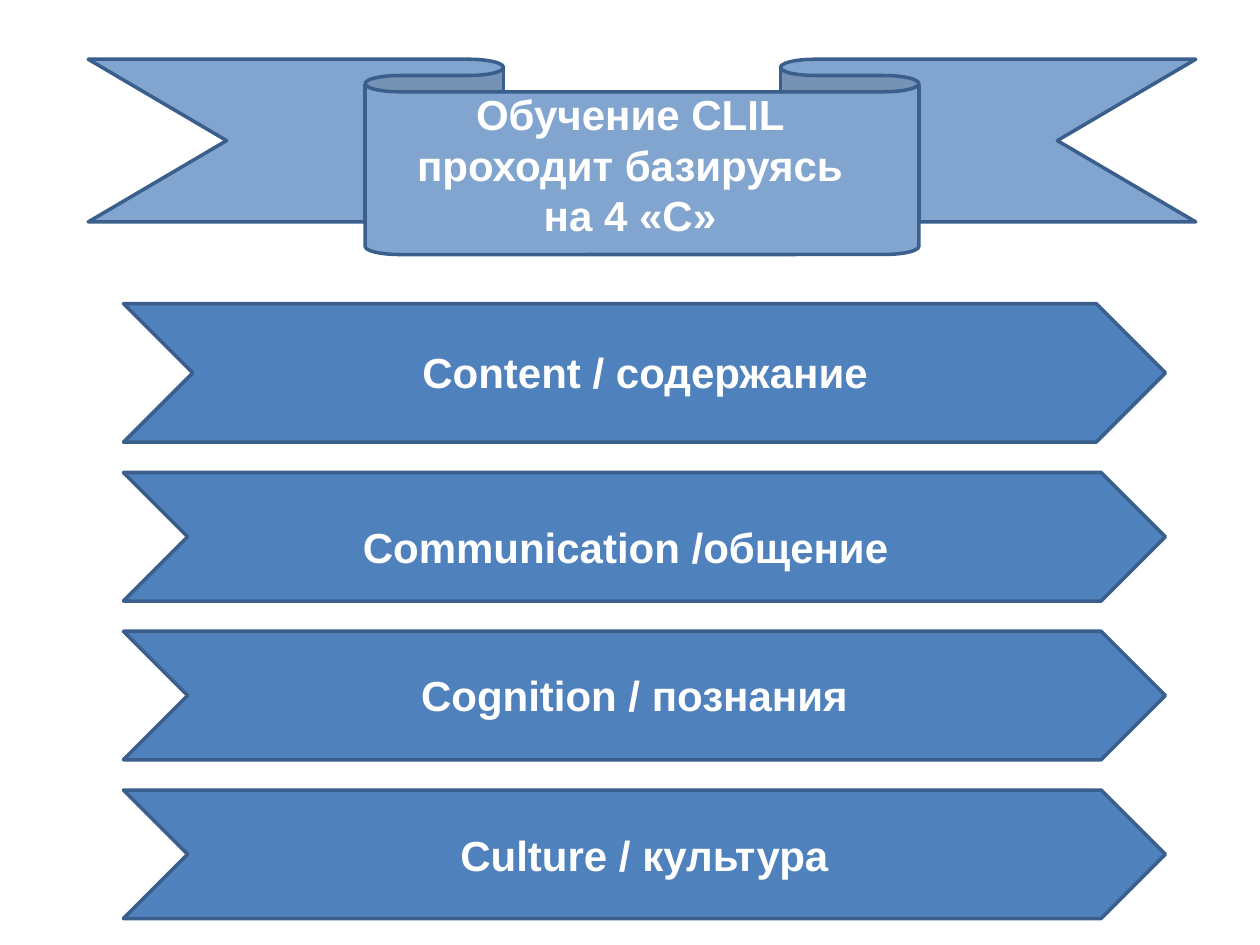
from lxml.etree import SubElement
from pptx import Presentation
from pptx.dml.color import RGBColor
from pptx.enum.shapes import MSO_SHAPE as Preset
from pptx.enum.text import MSO_ANCHOR as Anchor, MSO_AUTO_SIZE as AutoSize, PP_ALIGN as Align
from pptx.oxml.ns import qn
from pptx.util import Inches, Pt

BLUE = RGBColor(0x4F, 0x81, 0xBD)
OUTLINE = RGBColor(0x3A, 0x5F, 0x8C)
WHITE = RGBColor(0xFF, 0xFF, 0xFF)
WIDTH, HEIGHT = Inches(10), Inches(7.5)
COLUMNS, ROWS = 100, 75
TEXT_FORMAT = {"name": "Arial", "size": Pt(24), "bold": True}
FRAME_FORMAT = {"word_wrap": True, "vertical_anchor": Anchor.MIDDLE}

TITLE = "Обучение CLIL проходит базируясь на 4 «С»"
RIBBON_BOX = (7, 4.7, 87.9, 15.5)
TITLE_BOX = (31.1, 6.5, 37.8, 13.1)
ARROWS_LEFT, ARROWS_TOP, ARROWS_WIDTH = 9.8, 24.1, 82.7
ARROW_HEIGHTS = (11, 10.2, 10.2, 10.2)
ARROW_GAP = 2.4
LABELS = (
    ("Сontent / содержание", (14.6, 27, 73.2, 5)),
    ("Сommunication /общение", (15.4, 40.9, 68.5, 5)),
    ("Сognition / познания", (16.1, 52.6, 68.5, 5)),
)
LAST_LABEL = "Сulture / культура"


def place(box):
    left, top, width, height = box
    return (round(left * WIDTH / COLUMNS), round(top * HEIGHT / ROWS),
            round(width * WIDTH / COLUMNS), round(height * HEIGHT / ROWS))


def apply(target, values):
    for name, value in values.items():
        setattr(target, name, value)


def write(shape, text):
    apply(shape.text_frame, FRAME_FORMAT)
    paragraph = shape.text_frame.paragraphs[0]
    paragraph.alignment = Align.CENTER
    run = paragraph.add_run()
    run.text = text
    apply(run.font, TEXT_FORMAT)
    run.font.color.rgb = WHITE


def add_label(slide, box, text):
    label = slide.shapes.add_textbox(*place(box))
    write(label, text)
    label.text_frame.auto_size = AutoSize.SHAPE_TO_FIT_TEXT


def add_figure(slide, preset, box):
    shape = slide.shapes.add_shape(preset, *place(box))
    shape.shadow.inherit = False
    shape.fill.solid()
    shape.fill.fore_color.rgb = BLUE
    shape.line.color.rgb = OUTLINE
    shape.line.width = Pt(2)
    return shape


def add_banner(slide, box):
    ribbon = add_figure(slide, Preset.DOWN_RIBBON, box)
    color = ribbon.fill._xPr.find(qn("a:solidFill"))[0]
    SubElement(color, qn("a:alpha")).set("val", "71000")
    add_label(slide, TITLE_BOX, TITLE)


def add_arrows(slide, left, top, width):
    for height in ARROW_HEIGHTS:
        arrow = add_figure(slide, Preset.CHEVRON, (left, top, width, height))
        top += height + ARROW_GAP
    write(arrow, LAST_LABEL)
    for text, box in LABELS:
        add_label(slide, box, text)


def main():
    presentation = Presentation()
    apply(presentation, {"slide_width": WIDTH, "slide_height": HEIGHT})
    slide = presentation.slides.add_slide(presentation.slide_layouts[6])
    add_banner(slide, RIBBON_BOX)
    add_arrows(slide, ARROWS_LEFT, ARROWS_TOP, ARROWS_WIDTH)
    presentation.save("out.pptx")


if __name__ == "__main__":
    main()
